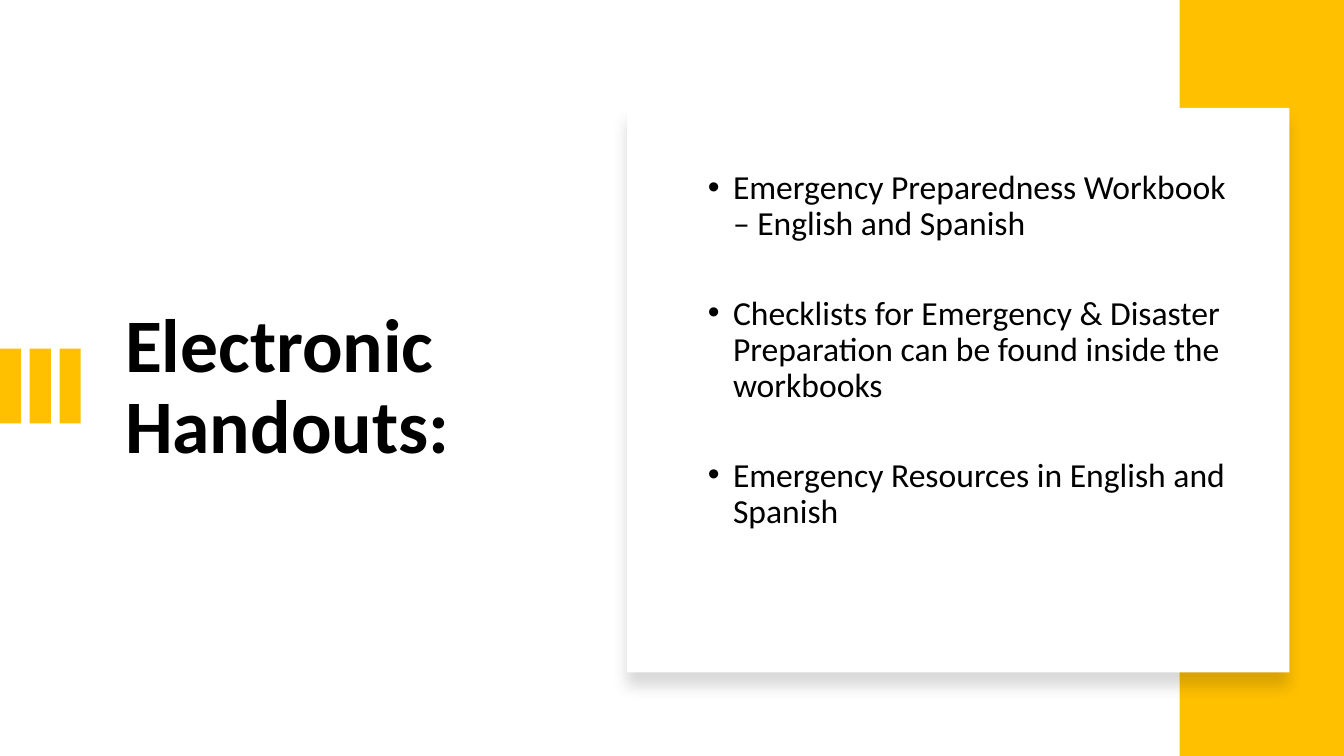
from typing import NamedTuple

import pptx
import pptx.dml.color
import pptx.enum.shapes
import pptx.enum.text
import pptx.oxml
import pptx.oxml.ns
import pptx.util
from pptx.util import Inches

FONT = "Calibri"
GOLD, WHITE, BLACK = "FFC000", "FFFFFF", "000000"


class Block(NamedTuple):
    left: float
    top: float
    width: float
    height: float
    color: str = GOLD


ACCENT_BARS = [Block(0.295 * i, 3.46, 0.21, 0.74) for i in range(3)]
SIDE_BAND = Block(11.7, 0, 1.63, 7.5)
CARD = Block(6.22, 1.07, 6.57, 5.6, WHITE)

HANDOUTS = [
    "Emergency Preparedness Workbook – English and Spanish",
    "Checklists for Emergency & Disaster Preparation can be found inside the workbooks",
    "Emergency Resources in English and Spanish",
]


def rgb(color: str) -> pptx.dml.color.RGBColor:
    return pptx.dml.color.RGBColor.from_string(color)


def add_block(slide, block: Block):
    shape = slide.shapes.add_shape(
        pptx.enum.shapes.MSO_SHAPE.RECTANGLE, *map(Inches, block[:4]))
    shape.fill.solid()
    shape.fill.fore_color.rgb = rgb(block.color)
    shape.line.fill.background()
    shape.shadow.inherit = False
    return shape


def add_soft_shadow(shape) -> None:
    effects = shape.element.spPr.find(pptx.oxml.ns.qn("a:effectLst"))
    effects.append(pptx.oxml.parse_xml(
        f'<a:outerShdw {pptx.oxml.ns.nsdecls("a")} blurRad="139700" dist="127000" '
        'dir="5400000" algn="t" rotWithShape="0">'
        f'<a:srgbClr val="{BLACK}"><a:alpha val="15000"/></a:srgbClr></a:outerShdw>'))


def place(holder, left: float, top: float, width: float, height: float, anchor):
    holder.left, holder.top = Inches(left), Inches(top)
    holder.width, holder.height = Inches(width), Inches(height)
    frame = holder.text_frame
    frame.word_wrap = True
    frame.auto_size = pptx.enum.text.MSO_AUTO_SIZE.NONE
    frame.vertical_anchor = anchor
    return frame


def add_text(paragraph, text: str, size: float, bold: bool = False) -> None:
    paragraph.alignment = pptx.enum.text.PP_ALIGN.LEFT
    paragraph.line_spacing = 0.9
    paragraph.space_before = pptx.util.Pt(0)
    run = paragraph.add_run()
    run.text = text
    run.font.name = FONT
    run.font.size = pptx.util.Pt(size)
    run.font.bold = bold
    run.font.color.rgb = rgb(BLACK)


def add_bullet(paragraph) -> None:
    properties = paragraph._p.get_or_add_pPr()
    properties.set("marL", str(Inches(0.5)))
    properties.set("indent", str(Inches(-0.25)))
    namespace = pptx.oxml.ns.nsdecls("a")
    properties.append(pptx.oxml.parse_xml(f'<a:buFont {namespace} typeface="Arial"/>'))
    properties.append(pptx.oxml.parse_xml(f'<a:buChar {namespace} char="•"/>'))


def main() -> None:
    deck = pptx.Presentation()
    deck.slide_width, deck.slide_height = Inches(13.33), Inches(7.5)
    slide = deck.slides.add_slide(deck.slide_layouts[1])
    slide.background.fill.solid()
    slide.background.fill.fore_color.rgb = rgb(WHITE)

    # Gold accents and the raised card
    for block in [*ACCENT_BARS, SIDE_BAND]:
        add_block(slide, block)
    add_soft_shadow(add_block(slide, CARD))

    # Title
    heading = place(slide.shapes.title, 1.14, 1.46, 4.26, 4.79,
                    pptx.enum.text.MSO_ANCHOR.MIDDLE)
    add_text(heading.paragraphs[0], "Electronic Handouts:", 54, bold=True)

    # Handout list, brought in front of the card
    handout_list = slide.placeholders[1]
    handout_list.element.getparent().append(handout_list.element)
    listing = place(handout_list, 6.67, 1.46, 5.75, 4.79,
                    pptx.enum.text.MSO_ANCHOR.TOP)
    listing.margin_top = Inches(0.23)
    for index, handout in enumerate(HANDOUTS):
        paragraph = listing.add_paragraph() if index else listing.paragraphs[0]
        add_bullet(paragraph)
        add_text(paragraph, handout, 24)
        if index:
            paragraph.space_before = pptx.util.Pt(38)

    deck.save("out.pptx")


if __name__ == "__main__":
    main()
